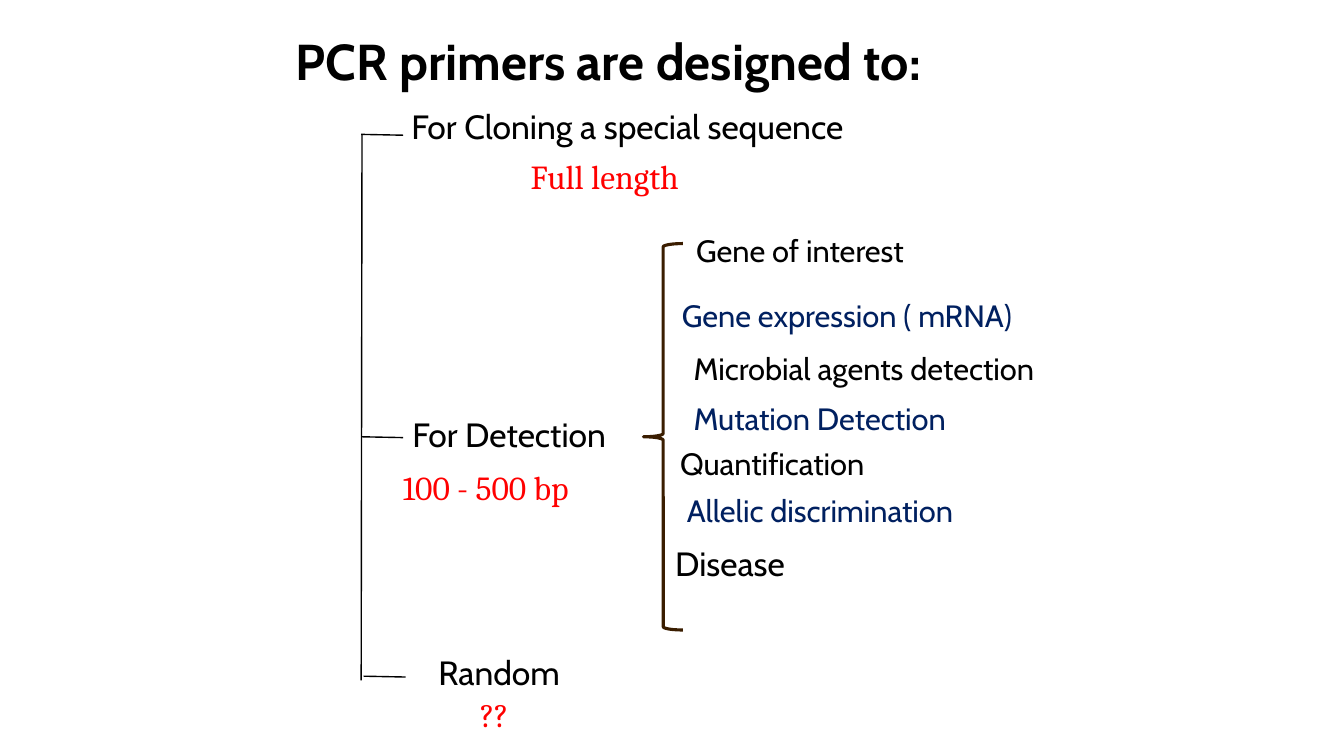
"""Build a slide that sorts PCR primer purposes into a bracketed tree."""
import pptx
import pptx.dml.color
import pptx.enum.shapes
import pptx.enum.text
import pptx.util
from lxml import etree

COLUMNS, ROWS = 160, 90
CELL = pptx.util.Inches(7.5) / ROWS
BLACK, NAVY, RED, BROWN = "000000", "002060", "FF0000", "3A1D00"


def cells(*counts):
    return [round(count * CELL) for count in counts]


def write(box, text, size, color, font="Cabin", bold=False):
    frame = box.text_frame
    frame.word_wrap = True
    frame.auto_size = pptx.enum.text.MSO_AUTO_SIZE.NONE
    frame.vertical_anchor = pptx.enum.text.MSO_ANCHOR.TOP
    para = frame.paragraphs[0]
    para.text = text
    para.alignment = pptx.enum.text.PP_ALIGN.LEFT
    para.font.name = font
    para.font.size = pptx.util.Pt(size)
    para.font.bold = bold
    para.font.color.rgb = pptx.dml.color.RGBColor.from_string(color)


deck = pptx.Presentation()
deck.slide_width, deck.slide_height = cells(COLUMNS, ROWS)
page = deck.slides.add_slide(deck.slide_layouts[5])

title = page.shapes.title
title.left, title.top, title.width, title.height = cells(34, 3, 91, 8.5)
write(title, "PCR primers are designed to:", 36, BLACK, bold=True)

labels = [
    ("For Cloning a special sequence", 47.8, 12, 60, 24, BLACK, "Cabin"),
    ("Full length", 62, 18, 20, 24, RED, "Cambria"),
    ("For Detection", 47.9, 48.7, 28, 24, BLACK, "Cabin"),
    ("100 - 500 bp", 46.8, 55, 23, 24, RED, "Cambria"),
    ("Random", 51, 77, 29, 24, BLACK, "Cabin"),
    ("??", 56, 82, 6, 24, RED, "Cambria"),
    ("Gene of interest", 81.7, 27, 48, 22, BLACK, "Cabin"),
    ("Gene expression ( mRNA)", 80, 34.7, 48, 22, NAVY, "Cabin"),
    ("Microbial agents detection", 81.4, 41, 48, 22, BLACK, "Cabin"),
    ("Mutation Detection", 81.4, 47, 48, 22, NAVY, "Cabin"),
    ("Quantification", 79.8, 52.4, 48, 22, BLACK, "Cabin"),
    ("Allelic discrimination", 80.6, 58, 48, 22, NAVY, "Cabin"),
    ("Disease", 79.2, 64, 48, 24, BLACK, "Cabin"),
]
for text, column, row, width, size, color, font in labels:
    box = page.shapes.add_textbox(*cells(column, row, width, 6))
    write(box, text, size, color, font)

brace = page.shapes.add_shape(
    pptx.enum.shapes.MSO_SHAPE.LEFT_BRACE, *cells(76.6, 29, 4.7, 46))
brace.shadow.inherit = False
brace.fill.background()
brace.line.color.rgb = pptx.dml.color.RGBColor.from_string(BROWN)
brace.line.width = pptx.util.Pt(2.25)

trunk = (43, 81, 43.1, 16)
branches = [(43, 16, 48, 16.1), (43, 52, 48, 52.1), (43.3, 80.5, 48.3, 80.6)]
for ends in [trunk, *branches]:
    line = page.shapes.add_connector(
        pptx.enum.shapes.MSO_CONNECTOR.STRAIGHT, *cells(*ends))
    line.line.color.rgb = pptx.dml.color.RGBColor.from_string(BLACK)
    line.line.width = pptx.util.Pt(1)
    etree.SubElement(line.element.spPr, pptx.oxml.ns.qn("a:effectLst"))

deck.save("out.pptx")
